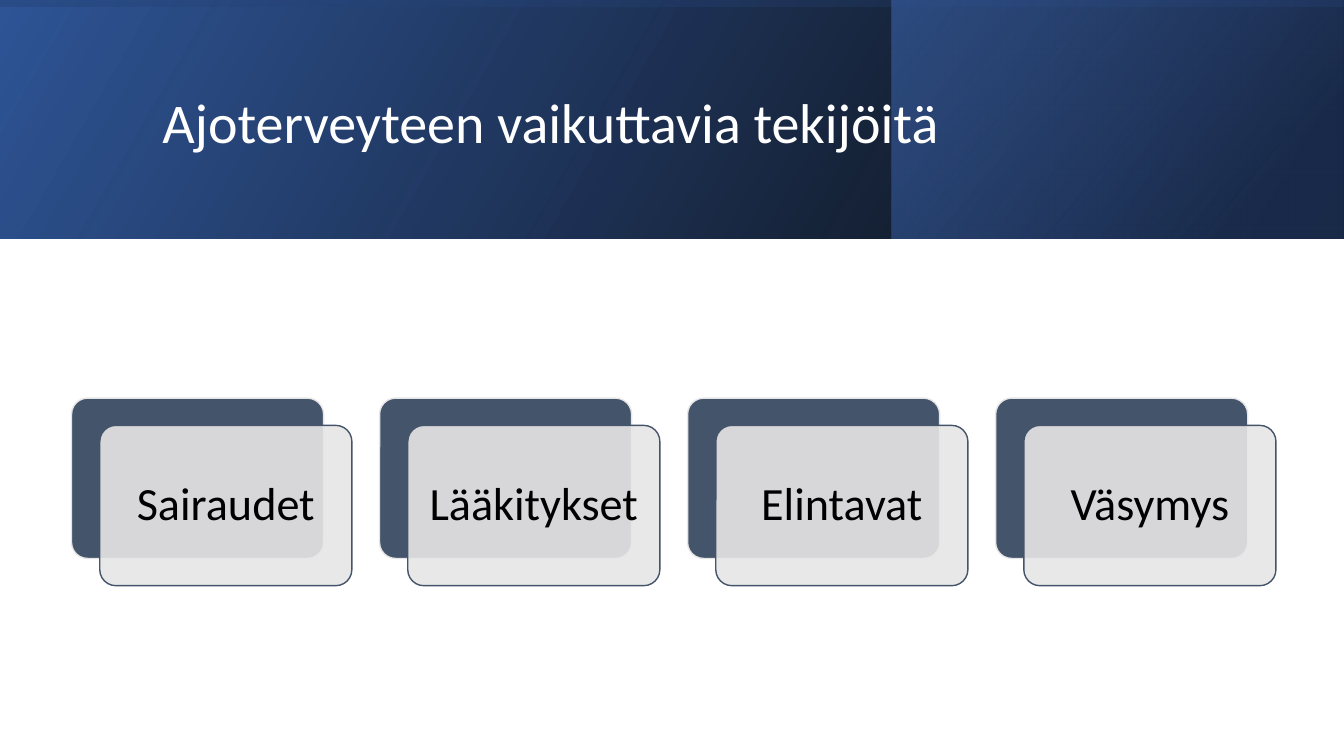
"""Build a slide with a gradient header and four cards on fitness to drive."""
from lxml import etree
from pptx import Presentation
from pptx.dml.color import RGBColor
from pptx.enum import shapes, text
from pptx.oxml import ns
from pptx.util import Inches, Pt


def color(value):
    return RGBColor.from_string(value)


def add_alpha(solid, percent):
    alpha = etree.SubElement(solid, ns.qn("a:alpha"))
    alpha.set("val", str(percent * 1000))


deck = Presentation()
deck.slide_width, deck.slide_height = Inches(13.33), Inches(7.5)
page = deck.slides.add_slide(deck.slide_layouts[5])

header_bands = [
    ((0, 0, 13.33, 2.37), 0, 330, [(0, "000000", 96), (100, "2F5597", 100)]),
    ((8.84, 0, 4.48, 2.37), 0, 320, [(19, "203864", 68), (100, "4472C4", 48)]),
    ((5.48, -5.48, 2.37, 13.33), 270, 350, [(23, "2F5597", 16), (99, "000000", 45)]),
]
for place, rotation, angle, stops in header_bands:
    band = page.shapes.add_shape(shapes.MSO_SHAPE.RECTANGLE, *map(Inches, place))
    band.shadow.inherit = False
    band.line.fill.background()
    band.rotation = rotation
    properties = band._element.spPr
    properties.find(ns.qn("a:xfrm")).set("flipH", "1")
    band.fill.gradient()
    band.fill.gradient_angle = 360 - angle
    gradient_stops = properties.find(".//" + ns.qn("a:gsLst"))
    for stop, (position, tint, opacity) in zip(band.fill.gradient_stops, stops):
        stop.position = position / 100
        stop.color.rgb = color(tint)
    for element, (position, tint, opacity) in zip(gradient_stops, stops):
        add_alpha(element[0], opacity)

title = page.shapes.title
page.shapes._spTree.append(title._element)
title.left, title.top = Inches(1.51), Inches(0.38)
title.width, title.height = Inches(10.63), Inches(1.72)
frame = title.text_frame
frame.word_wrap = True
frame.auto_size = text.MSO_AUTO_SIZE.NONE
frame.vertical_anchor = text.MSO_ANCHOR.MIDDLE
para = frame.paragraphs[0]
para.alignment = text.PP_ALIGN.LEFT
para.line_spacing = 0.9
span = para.add_run()
span.text = "Ajoterveyteen vaikuttavia tekijöitä"
span.font.name, span.font.size = "Calibri", Pt(40)
span.font.color.rgb = color("FFFFFF")

cards = page.shapes.add_group_shape()
card_layers = [(0.71, 3.95, "44546A", "E7E6E6"), (0.99, 4.22, "E7E6E6", "44546A")]
for index, factor in enumerate(["Sairaudet", "Lääkitykset", "Elintavat", "Väsymys"]):
    for left, top, fill, outline in card_layers:
        card = cards.shapes.add_shape(
            shapes.MSO_SHAPE.ROUNDED_RECTANGLE, Inches(left + index * 3.055),
            Inches(top), Inches(2.5), Inches(1.59))
        card.shadow.inherit = False
        card.adjustments[0] = 0.1
        card.fill.solid()
        card.fill.fore_color.rgb = color(fill)
        card.line.color.rgb = color(outline)
        card.line.width = Pt(1)
    add_alpha(card._element.spPr.find(ns.qn("a:solidFill"))[0], 90)
    frame = card.text_frame
    frame.word_wrap = True
    frame.vertical_anchor = text.MSO_ANCHOR.MIDDLE
    frame.margin_left = frame.margin_right = Inches(0.14)
    frame.margin_top = frame.margin_bottom = Inches(0.14)
    para = frame.paragraphs[0]
    para.alignment = text.PP_ALIGN.CENTER
    para.line_spacing = 0.9
    span = para.add_run()
    span.text = factor
    span.font.name, span.font.size = "Calibri", Pt(33)
    span.font.color.rgb = color("000000")

deck.save("out.pptx")
